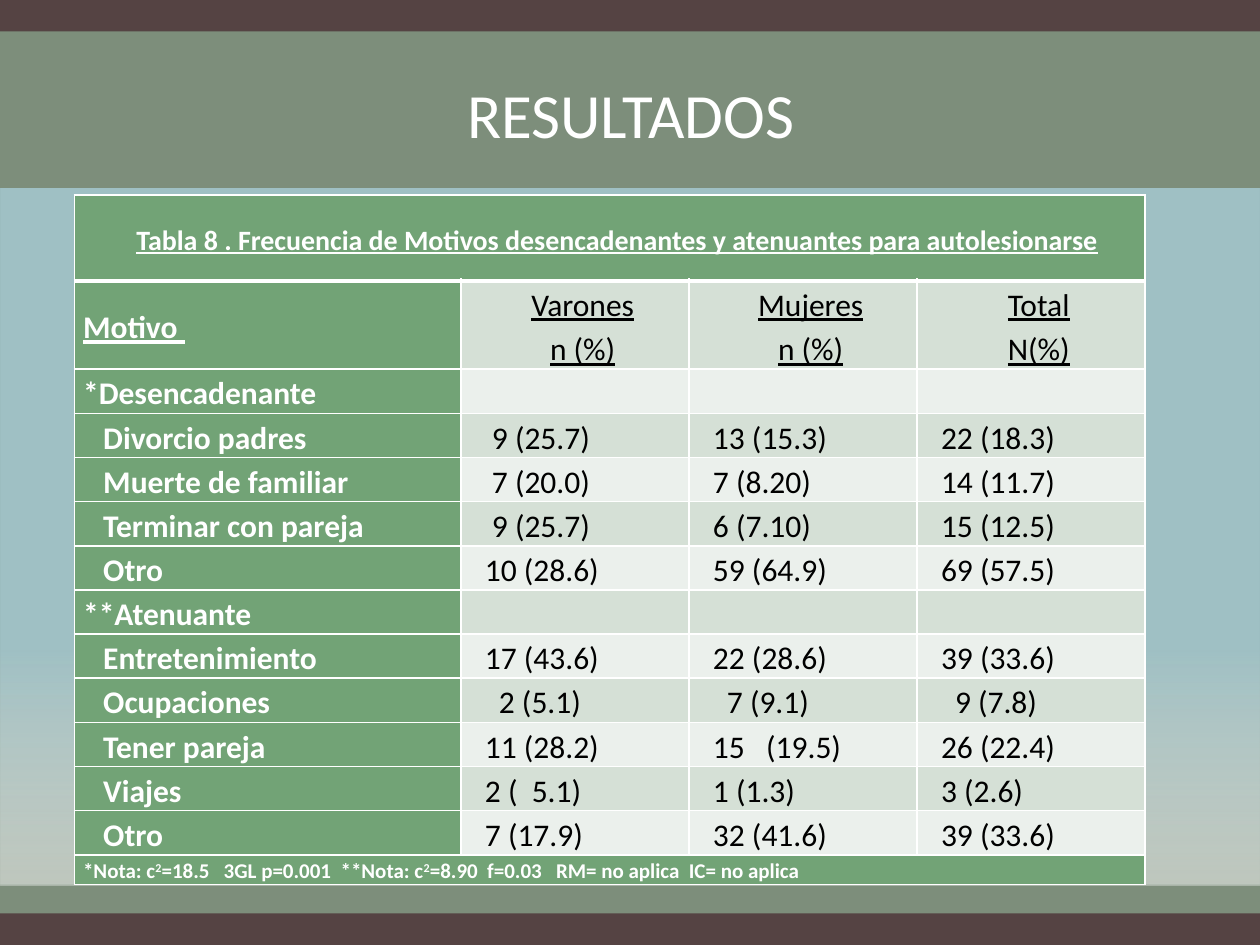
from pptx import Presentation
from pptx.dml.color import RGBColor
from pptx.enum.shapes import MSO_SHAPE
from pptx.enum.text import MSO_ANCHOR, PP_ALIGN
from pptx.oxml.ns import qn
from pptx.oxml.xmlchemy import OxmlElement
from pptx.util import Pt

FONT = "Calibri"
WHITE, BLACK, GREEN = "FFFFFF", "000000", "72A376"
BANDS = ("EBF0EC", "D5E0D6")
VALUE_INDENT, LABEL_INDENT = 8.64, 11.52

CAPTION = "Tabla 8 . Frecuencia de Motivos desencadenantes y atenuantes para autolesionarse"
HEADINGS = [("Varones", "n (%)"), ("Mujeres", "n (%)"), ("Total", "N(%)")]
NO_VALUES, NO_SHIFT, FIRST_SHIFT = (), (0, 0, 0), (4, 0, 0)
# Label, values, extra indent of each value
REASONS = [
    ("*Desencadenante", NO_VALUES, NO_SHIFT),
    ("Divorcio padres", ("9 (25.7)", "13 (15.3)", "22 (18.3)"), FIRST_SHIFT),
    ("Muerte de familiar", ("7 (20.0)", "7 (8.20)", "14 (11.7)"), FIRST_SHIFT),
    ("Terminar con pareja", ("9 (25.7)", "6 (7.10)", "15 (12.5)"), FIRST_SHIFT),
    ("Otro", ("10 (28.6)", "59 (64.9)", "69 (57.5)"), NO_SHIFT),
    ("**Atenuante", NO_VALUES, NO_SHIFT),
    ("Entretenimiento", ("17 (43.6)", "22 (28.6)", "39 (33.6)"), NO_SHIFT),
    ("Ocupaciones", ("2 (5.1)", "7 (9.1)", "9 (7.8)"), (8, 8, 8)),
    ("Tener pareja", ("11 (28.2)", "15   (19.5)", "26 (22.4)"), NO_SHIFT),
    ("Viajes", ("2 (  5.1)", "1 (1.3)", "3 (2.6)"), NO_SHIFT),
    ("Otro", ("7 (17.9)", "32 (41.6)", "39 (33.6)"), NO_SHIFT),
]
NOTE = [("*Nota: c", False), ("2", True), ("=18.5   3GL p=0.001  **Nota: c", False),
        ("2", True), ("=8.90  f=0.03   RM= no aplica  IC= no aplica", False)]


def color(value):
    return RGBColor.from_string(value)


def add_run(paragraph, text, size, ink, bold=False, underline=False, raised=False):
    run = paragraph.add_run()
    run.text = text
    font = run.font
    font.name, font.size, font.bold, font.underline = FONT, Pt(size), bold, underline
    font.color.rgb = color(ink)
    if raised:
        font._element.set("baseline", "30000")


def set_alpha(shape, *percents):
    for element, percent in zip(shape._element.spPr.iter(qn("a:srgbClr")), percents):
        alpha = OxmlElement("a:alpha")
        alpha.set("val", str(percent * 1000))
        element.append(alpha)


def add_panel(slide, left, top, width, height):
    shape = slide.shapes.add_shape(MSO_SHAPE.RECTANGLE, Pt(left), Pt(top), Pt(width), Pt(height))
    shape.shadow.inherit = False
    shape.line.fill.background()
    return shape


def add_background(slide, left, top, width, height):
    # Dark frame
    frame = add_panel(slide, left, top, width, height)
    frame.fill.solid()
    frame.fill.fore_color.rgb = color("554343")
    # Green band
    band = add_panel(slide, left, top + 18, width, height - 36)
    band.fill.solid()
    band.fill.fore_color.rgb = color("829782")
    set_alpha(band, 90)
    # Sky, fading downwards
    sky = add_panel(slide, left, top + 108, width, 398)
    sky.fill.gradient()
    sky.fill.gradient_angle = 270
    stops = ((0.66, "A8CDD7"), (1, WHITE))
    for stop, (position, tint) in zip(sky.fill.gradient_stops, stops):
        stop.position = position
        stop.color.rgb = color(tint)
    set_alpha(sky, 79, 50)


def add_title(slide, left, top, width, height):
    box = slide.shapes.add_textbox(Pt(left), Pt(top), Pt(width), Pt(height))
    frame = box.text_frame
    frame.word_wrap = True
    frame.vertical_anchor = MSO_ANCHOR.BOTTOM
    paragraph = frame.paragraphs[0]
    paragraph.alignment = PP_ALIGN.CENTER
    add_run(paragraph, "RESULTADOS", 36, WHITE)


def style_cell(cell, fill, top_width=1, bottom_width=1):
    cell.margin_left = cell.margin_right = Pt(5)
    cell.margin_top = cell.margin_bottom = 0
    cell.vertical_anchor = MSO_ANCHOR.MIDDLE
    widths = {"a:lnL": 1, "a:lnR": 1, "a:lnT": top_width, "a:lnB": bottom_width}
    for index, (tag, width) in enumerate(widths.items()):
        border = OxmlElement(tag)
        border.set("w", str(Pt(width)))
        solid, tint = OxmlElement("a:solidFill"), OxmlElement("a:srgbClr")
        tint.set("val", WHITE)
        solid.append(tint)
        border.append(solid)
        cell._tc.get_or_add_tcPr().insert(index, border)
    cell.fill.solid()
    cell.fill.fore_color.rgb = color(fill)


def format_paragraph(paragraph, indent=0, alignment=PP_ALIGN.LEFT):
    paragraph.alignment = alignment
    paragraph.line_spacing = 1.15
    properties = paragraph._p.get_or_add_pPr()
    properties.set("marL", str(Pt(indent)))
    properties.set("indent", "0")
    return paragraph


def add_results_table(slide, left, top, width, height):
    caption_height, heading_height, note_height = 49, 50.5, 17
    last = len(REASONS) + 2
    row_height = (height - caption_height - heading_height - note_height) / len(REASONS)
    heights = [caption_height, heading_height] + [row_height] * len(REASONS) + [note_height]
    table = slide.shapes.add_table(last + 1, 4, Pt(left), Pt(top), Pt(width), Pt(height)).table
    label_width = 221
    for index, column in enumerate(table.columns):
        column.width = Pt(label_width if index == 0 else (width - label_width) / 3)

    # Fills and borders
    for row_index, row in enumerate(table.rows):
        row.height = Pt(heights[row_index])
        for column_index, cell in enumerate(row.cells):
            is_green = column_index == 0 or row_index in (0, last)
            style_cell(cell, GREEN if is_green else BANDS[row_index % 2],
                       top_width=3 if row_index == 1 else 1,
                       bottom_width=3 if row_index == 0 else 1)
    for row_index in (0, last):
        table.cell(row_index, 0).merge(table.cell(row_index, 3))

    def first_paragraph(row_index, column_index, *layout):
        frame = table.cell(row_index, column_index).text_frame
        return format_paragraph(frame.paragraphs[0], *layout)

    # Caption and headings
    centred = (VALUE_INDENT, PP_ALIGN.CENTER)
    add_run(first_paragraph(0, 0, *centred), CAPTION, 16, WHITE, True, True)
    add_run(first_paragraph(1, 0), "Motivo ", 18, WHITE, True, True)
    for column_index, (name, unit) in enumerate(HEADINGS, 1):
        add_run(first_paragraph(1, column_index, *centred), name, 18, BLACK, underline=True)
        second = table.cell(1, column_index).text_frame.add_paragraph()
        add_run(format_paragraph(second, *centred), unit, 18, BLACK, underline=True)

    # Reasons
    for row_index, (label, values, shifts) in enumerate(REASONS, 2):
        indent = LABEL_INDENT if values else 0
        add_run(first_paragraph(row_index, 0, indent), label, 18, WHITE, True)
        for column_index, (value, shift) in enumerate(zip(values, shifts), 1):
            paragraph = first_paragraph(row_index, column_index, VALUE_INDENT + shift)
            add_run(paragraph, value, 18, BLACK)

    # Note
    paragraph = first_paragraph(last, 0)
    for text, raised in NOTE:
        add_run(paragraph, text, 12, WHITE, True, raised=raised)


def main():
    presentation = Presentation()
    presentation.slide_width, presentation.slide_height = Pt(720), Pt(540)
    slide = presentation.slides.add_slide(presentation.slide_layouts[6])
    add_background(slide, 0, 0, 720, 540)
    add_title(slide, 36.5, 0, 648, 90)
    add_results_table(slide, 42.5, 111.5, 612, 394.25)
    presentation.save("out.pptx")


if __name__ == "__main__":
    main()
